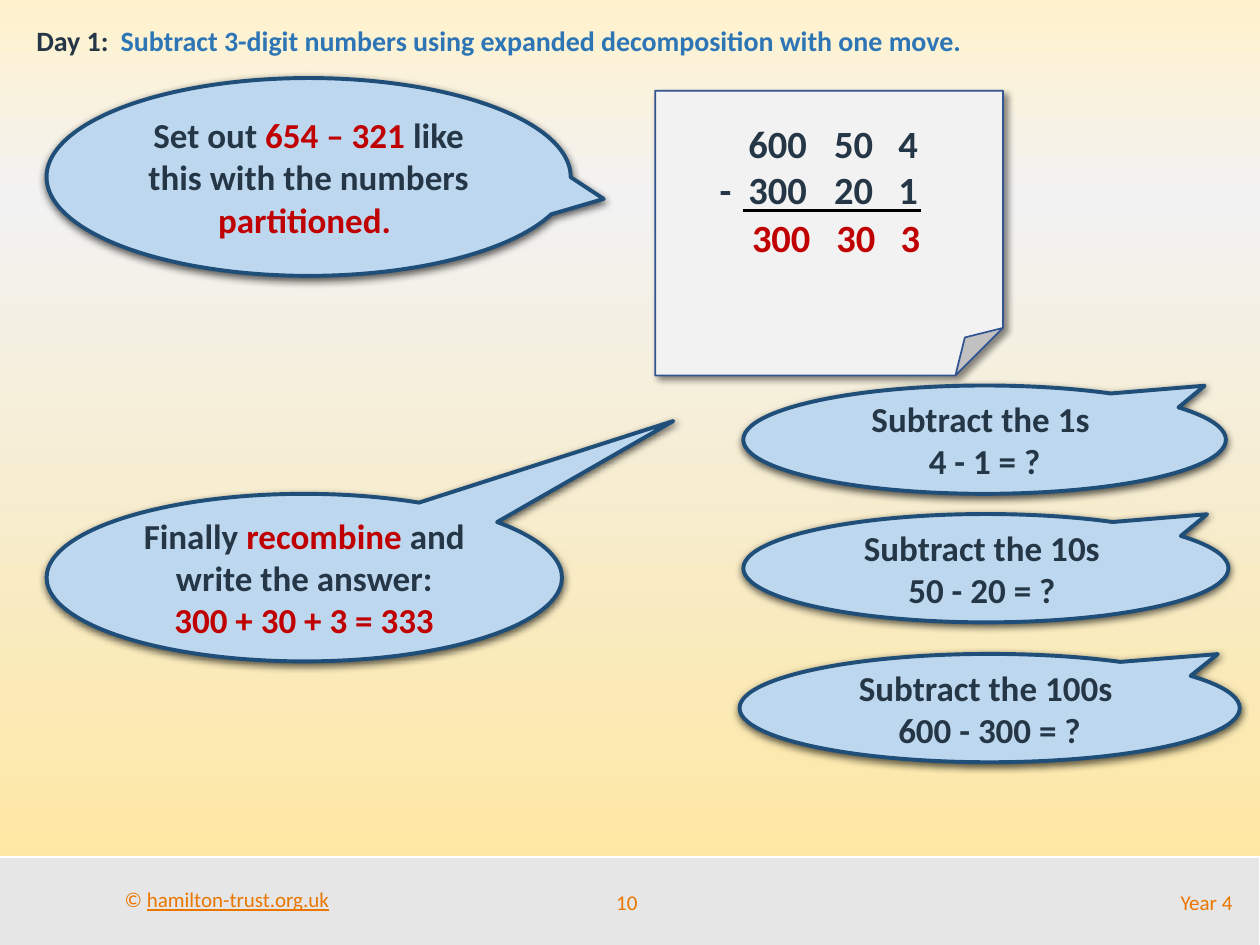
from lxml import etree
from pptx import Presentation
from pptx.dml.color import RGBColor
from pptx.enum import shapes as s, text as t
from pptx.oxml import ns
from pptx.util import Pt

INK, RED, BLUE, ORANGE = "253746", "C00000", "2E75B6", "EA7600"
LEFT, MID, RIGHT = t.PP_ALIGN.LEFT, t.PP_ALIGN.CENTER, t.PP_ALIGN.RIGHT


def rgb(code):
    return RGBColor.from_string(code)


def write(shape, rows, size, bold=True, align=LEFT, stops=()):
    """Fill a shape with rows of (words, colour) runs; stops are (pos, align)."""
    frame = shape.text_frame
    frame.word_wrap = True
    for i, row in enumerate(rows):
        para = frame.paragraphs[0] if i == 0 else frame.add_paragraph()
        para.alignment = align
        if stops:
            tabs = etree.SubElement(para._p.get_or_add_pPr(), ns.qn("a:tabLst"))
            for pos, side in stops:
                etree.SubElement(tabs, ns.qn("a:tab"), pos=str(Pt(pos)), algn=side)
        para.font.name, para.font.size, para.font.bold = "Calibri", Pt(size), bold
        for words, tone in row:
            run = para.add_run()
            run.text = words
            run.font.color.rgb = rgb(tone)
    return frame


def draw(kind, box, fill, line, width, shade=None):
    """Add a filled shape; shade is (alpha %, blur, distance, angle)."""
    shape = slide.shapes.add_shape(kind, *map(Pt, box))
    shape.fill.solid()
    shape.fill.fore_color.rgb = rgb(fill)
    shape.line.color.rgb = rgb(line)
    shape.line.width = Pt(width)
    shape.shadow.inherit = False
    if shade:
        alpha, blur, dist, angle = shade
        glow = etree.SubElement(
            shape._element.spPr.find(ns.qn("a:effectLst")), ns.qn("a:outerShdw"),
            blurRad=str(Pt(blur)), dist=str(Pt(dist)), dir=str(angle * 60000),
            algn="tl", rotWithShape="0")
        tone = etree.SubElement(glow, ns.qn("a:srgbClr"), val="000000")
        etree.SubElement(tone, ns.qn("a:alpha"), val=str(alpha * 1000))
    return shape


deck = Presentation()
deck.slide_width, deck.slide_height = Pt(720), Pt(540)
slide = deck.slides.add_slide(deck.slide_layouts[6])

# Background gradient, top to bottom
back = slide.background.fill
back.gradient()
back.gradient_angle = 270
grad = slide.element.find(".//" + ns.qn("a:gsLst"))
for old in list(grad):
    grad.remove(old)
for pos, code in (0, "FFF2CC"), (21, "F2F2F2"), (100, "FFE699"):
    stop = etree.SubElement(grad, ns.qn("a:gs"), pos=str(pos * 1000))
    etree.SubElement(stop, ns.qn("a:srgbClr"), val=code)

# Footer
draw(s.MSO_SHAPE.RECTANGLE, (-4.32, 489.6, 724.32, 51.84), "E7E6E6", "FFFFFF", 1)
box = slide.shapes.add_textbox(Pt(64.08), Pt(503.28), Pt(132.48), Pt(21.6))
foot = write(box, [[("© ", ORANGE), ("hamilton-trust.org.uk", ORANGE)]], 12, False)
foot.word_wrap = False
foot.paragraphs[0].runs[1].font.underline = True
for left, width, words, align in (
    (329.76, 56.88, "10", MID),
    (468, 243.36, "Year 4", RIGHT),
):
    box = slide.shapes.add_textbox(Pt(left), Pt(501.12), Pt(width), Pt(28.8))
    frame = write(box, [[(words, ORANGE)]], 12, False, align)
    frame.vertical_anchor = t.MSO_ANCHOR.MIDDLE

# Title
box = slide.shapes.add_textbox(Pt(13.68), Pt(10.08), Pt(686.88), Pt(26.64))
goal = "Subtract 3-digit numbers using expanded decomposition with one move."
write(box, [[("Day 1:\t", INK), (goal, BLUE)]], 16, stops=[(48.2, "l")])

# Paper with the sum set out in columns
paper = draw(s.MSO_SHAPE.FOLDED_CORNER, (374.4, 51.84, 198.72, 162.72),
             "F2F2F2", "325491", 1, (45, 4, 3, 45))
sums = [[("\t\t600\t50\t4", INK)], [("\t-\t300\t20\t1", INK)]]
frame = write(paper, sums, 22,
              stops=[(29.8, "l"), (79.6, "r"), (117.4, "r"), (143, "r")])
frame.vertical_anchor = t.MSO_ANCHOR.TOP
frame.margin_top = Pt(16.5)

# Rule under the sum
rule = slide.shapes.add_connector(
    s.MSO_CONNECTOR.STRAIGHT, Pt(424.8), Pt(120.24), Pt(526.32), Pt(120.24))
rule.line.color.rgb = rgb("000000")
rule.line.width = Pt(2)
etree.SubElement(rule._element.spPr, ns.qn("a:effectLst"))

# Answer digits
for left, words in (422.64, "300"), (470.88, "30"), (507.6, "3"):
    box = slide.shapes.add_textbox(Pt(left), Pt(118.8), Pt(54), Pt(33.84))
    write(box, [[(words, RED)]], 22)

# Speech bubbles: box, tail, rows
tail = (0.456, -0.498)
bubbles = [
    ((26.64, 44.64, 299.52, 113.04), (0.563, 0.111),
     [[("Set out ", INK), ("654 – 321 ", RED),
       ("like this with the numbers ", INK), ("partitioned. ", RED)]]),
    ((424.8, 220.32, 275.76, 61.92), tail,
     [[("Subtract the 1s ", INK)], [("4 - 1 = ?", INK)]]),
    ((424.8, 293.76, 277.2, 61.92), tail,
     [[("Subtract the 10s ", INK)], [("50 - 20 = ? ", INK)]]),
    ((422.64, 373.68, 285.84, 61.92), tail,
     [[("Subtract the 100s ", INK)], [("600 - 300 = ?", INK)]]),
    ((26.64, 282.24, 294.48, 95.76), (0.716, -0.935),
     [[("Finally ", INK), ("recombine", RED), (" and write the answer:", INK)],
      [("300 + 30 + 3 = 333", RED)]]),
]
for place, tip, rows in bubbles:
    shape = draw(s.MSO_SHAPE.OVAL_CALLOUT, place, "BDD7EE", "1F4E79", 2.25,
                 (63, 4.5, 1.5, 90))
    shape.adjustments[0], shape.adjustments[1] = tip
    frame = write(shape, rows, 20, align=MID)
    frame.vertical_anchor = t.MSO_ANCHOR.MIDDLE

deck.save("out.pptx")
